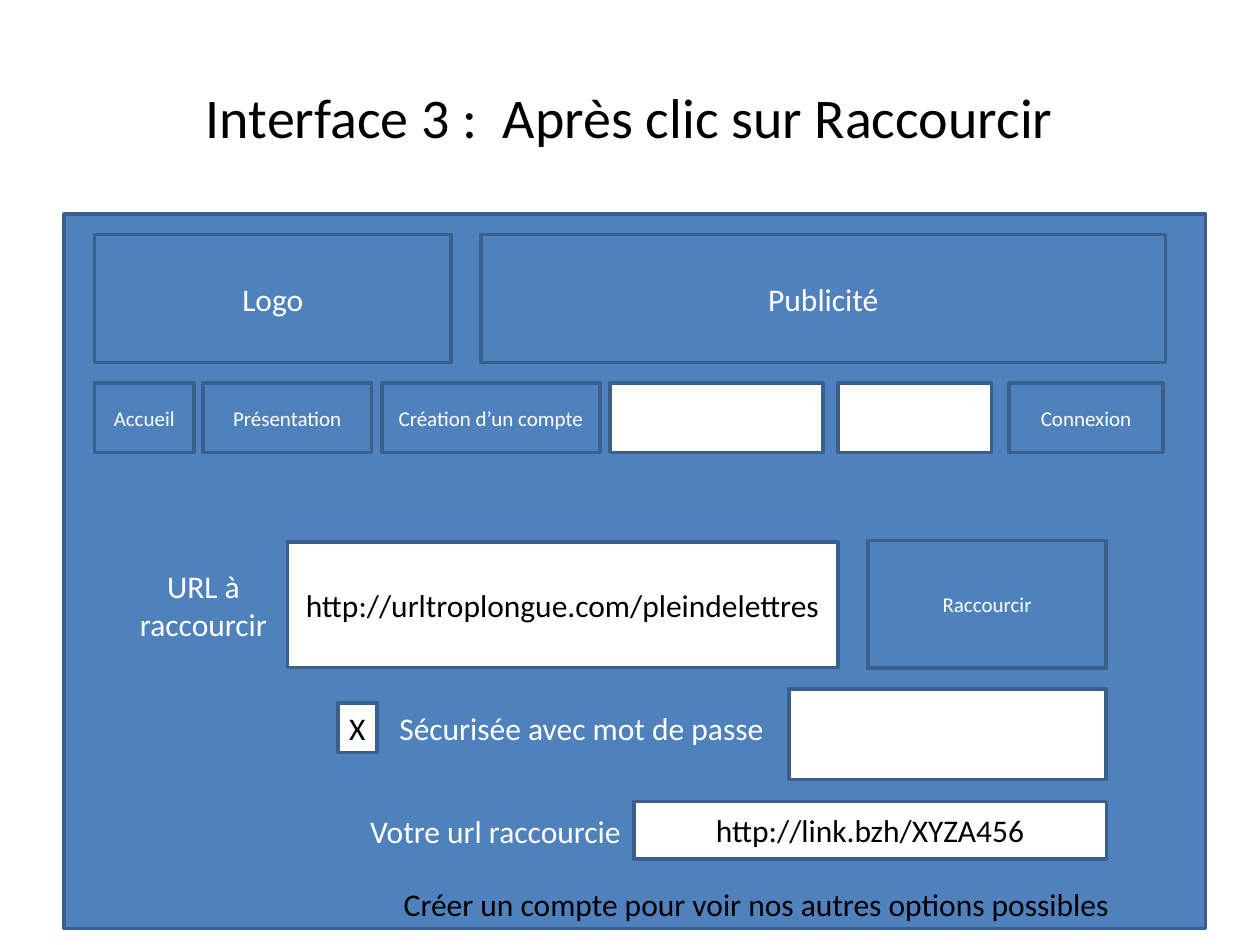
"""Build the wireframe slide shown after clicking on Raccourcir."""
from pptx import Presentation
from pptx.dml.color import RGBColor
from pptx.enum.shapes import MSO_SHAPE
from pptx.enum.text import MSO_ANCHOR, PP_ALIGN
from pptx.util import Pt

FONT = "Calibri"
COLORS = {"blue": "4F81BD", "border": "3A5F8C", "white": "FFFFFF", "black": "000000"}
STYLES = {
    "panel": {"fill": "blue", "font": "white", "border": True},
    "label": {"fill": "blue", "font": "white", "border": False},
    "field": {"fill": "white", "font": "black", "border": True},
}

TITLE = ("Interface 3 :  Après clic sur Raccourcir", 36, 21.6, 648, 90, 32)
FOOTNOTE = ("Créer un compte pour voir nos autres options possibles", 221, 501.8, 422.6, 29, 18)

FRAME = ("panel", "", 36.7, 122.4, 652.3, 408.2, 18)
HEADER_TOP, HEADER_HEIGHT = 133.9, 73.4
HEADER = [("Logo", 54, 203.8), ("Publicité", 275, 391)]
MENU_TOP, MENU_HEIGHT = 218.9, 39.6
MENU = [
    ("panel", "Accueil", 54, 56.9),
    ("panel", "Présentation", 115.9, 96.5),
    ("panel", "Création d’un compte", 218.2, 124.6),
    ("field", "", 348.5, 121.7),
    ("field", "", 478.8, 87.8),
    ("panel", "Connexion", 576.7, 87.8),
]
FORM = [
    ("label", "URL à raccourcir", 68.4, 309.6, 95.8, 72, 18),
    ("field", "http://urltroplongue.com/pleindelettres", 164.2, 309.6, 314.6, 72, 18),
    ("panel", "Raccourcir", 496, 308.9, 136.1, 72.7, 12),
    ("field", "X", 193, 401.8, 22.3, 28.1, 18),
    ("label", "Sécurisée avec mot de passe", 218.2, 393.1, 228.2, 45.4, 18),
    ("field", "", 450.7, 393.8, 181.4, 51.8, 18),
    ("label", "Votre url raccourcie", 204.5, 446.4, 427.7, 56.9, 18),
    ("field", "http://link.bzh/XYZA456", 362.2, 457.9, 270, 33.1, 18),
]
LEFT_ALIGNED = {"Votre url raccourcie"}
NO_MARGIN = {"X"}


def color(name):
    return RGBColor.from_string(COLORS[name])


def write(shape, text, size, font_color):
    frame = shape.text_frame
    frame.word_wrap = True
    frame.vertical_anchor = MSO_ANCHOR.MIDDLE
    if text in NO_MARGIN:
        frame.margin_left = frame.margin_right = 0
    frame.text = text
    paragraph = frame.paragraphs[0]
    paragraph.alignment = PP_ALIGN.LEFT if text in LEFT_ALIGNED else PP_ALIGN.CENTER
    for span in paragraph.runs:
        span.font.name = FONT
        span.font.size = Pt(size)
        span.font.color.rgb = color(font_color)


def add_box(page, kind, text, left, top, width, height, size):
    style = STYLES[kind]
    box = page.shapes.add_shape(
        MSO_SHAPE.RECTANGLE, Pt(left), Pt(top), Pt(width), Pt(height))
    box.shadow.inherit = False
    box.fill.solid()
    box.fill.fore_color.rgb = color(style["fill"])
    if style["border"]:
        box.line.color.rgb = color("border")
        box.line.width = Pt(2)
    else:
        box.line.fill.background()
    if text:
        write(box, text, size, style["font"])


def add_text(page, text, left, top, width, height, size):
    box = page.shapes.add_textbox(Pt(left), Pt(top), Pt(width), Pt(height))
    write(box, text, size, "black")
    return box


def main():
    deck = Presentation()
    deck.slide_width, deck.slide_height = Pt(720), Pt(540)
    page = deck.slides.add_slide(deck.slide_layouts[6])
    add_text(page, *TITLE)
    add_box(page, *FRAME)
    for text, left, width in HEADER:
        add_box(page, "panel", text, left, HEADER_TOP, width, HEADER_HEIGHT, 18)
    for kind, text, left, width in MENU:
        add_box(page, kind, text, left, MENU_TOP, width, MENU_HEIGHT, 12)
    for item in FORM:
        add_box(page, *item)
    footnote = add_text(page, *FOOTNOTE)
    footnote.text_frame.word_wrap = False
    deck.save("out.pptx")


if __name__ == "__main__":
    main()
